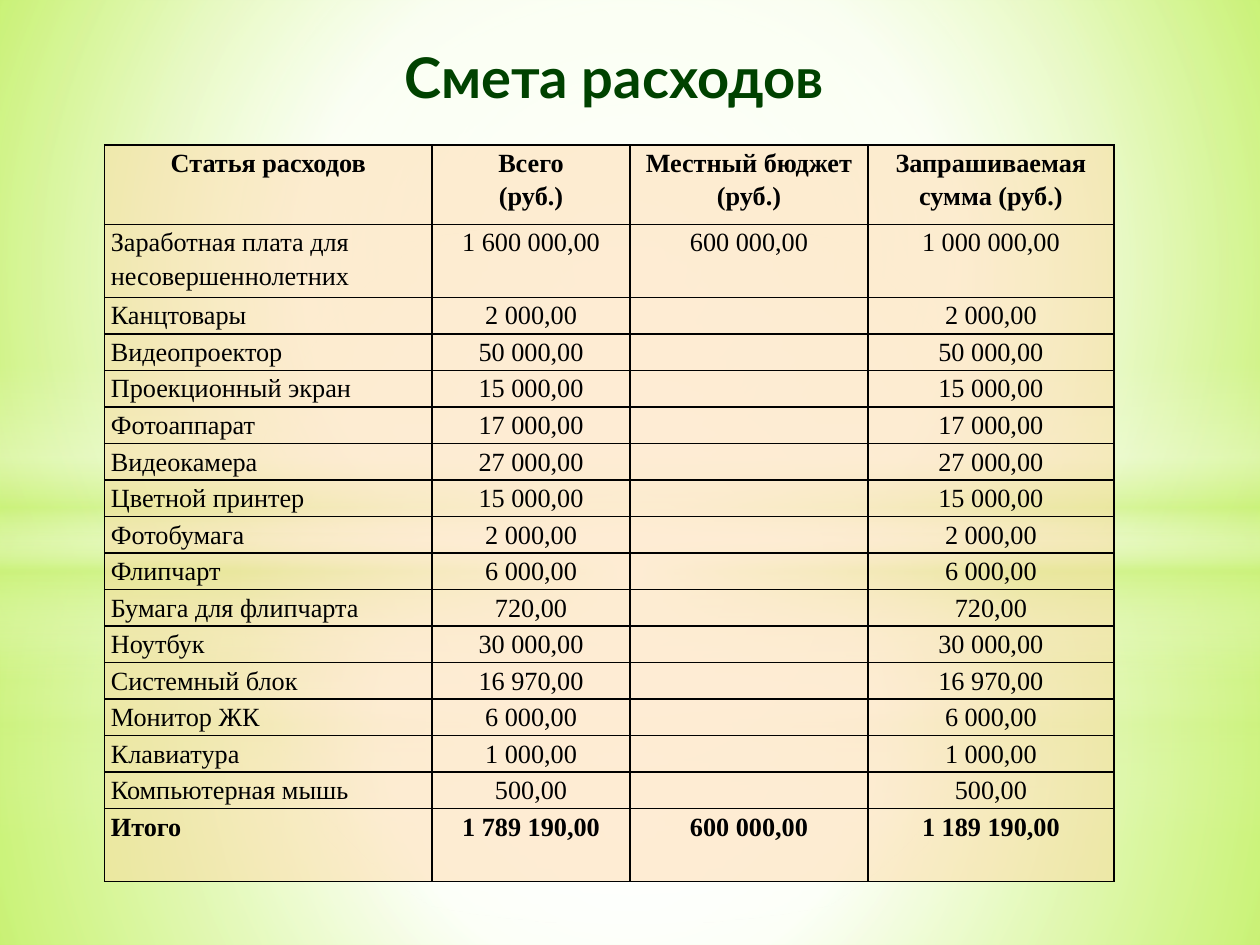
import lxml.etree
import pptx
import pptx.dml.color
import pptx.enum.shapes
import pptx.enum.text
import pptx.oxml.ns
import pptx.util

Inches = pptx.util.Inches
Pt = pptx.util.Pt
ALIGN = pptx.enum.text.PP_ALIGN
SHAPE = pptx.enum.shapes.MSO_SHAPE
qn = pptx.oxml.ns.qn

WHITE, LIME = "FFFFFF", "CAF278"
CENTER = (50, 50, 50, 50)

HEADER = ("Статья расходов", "Всего\n(руб.)", "Местный бюджет\n(руб.)",
          "Запрашиваемая сумма (руб.)")
SALARY = ("Заработная плата для несовершеннолетних",
          "1 600 000,00", "600 000,00", "1 000 000,00")
# Purchases have no local funding: the whole price is requested
PURCHASES = (
    ("Канцтовары", "2 000,00"),
    ("Видеопроектор", "50 000,00"),
    ("Проекционный экран", "15 000,00"),
    ("Фотоаппарат", "17 000,00"),
    ("Видеокамера", "27 000,00"),
    ("Цветной принтер", "15 000,00"),
    ("Фотобумага", "2 000,00"),
    ("Флипчарт", "6 000,00"),
    ("Бумага для флипчарта", "720,00"),
    ("Ноутбук", "30 000,00"),
    ("Системный блок", "16 970,00"),
    ("Монитор ЖК", "6 000,00"),
    ("Клавиатура", "1 000,00"),
    ("Компьютерная мышь", "500,00"),
)
TOTAL = ("Итого", "1 789 190,00", "600 000,00", "1 189 190,00")


def rgb(value):
    return pptx.dml.color.RGBColor.from_string(value)


def add_xml(parent, tag, **attributes):
    return lxml.etree.SubElement(
        parent, qn(tag), {key: str(value) for key, value in attributes.items()})


def set_alpha(color, percent):
    add_xml(color, "a:alpha", val=percent * 1000)


def set_gradient(properties, stops, focus=None):
    """Swap a solid fill for a gradient: circular around focus, else downward."""
    solid = properties.find(qn("a:solidFill"))
    gradient = lxml.etree.Element(qn("a:gradFill"), rotWithShape="1")
    stop_list = add_xml(gradient, "a:gsLst")
    for position, color, alpha in stops:
        stop = add_xml(stop_list, "a:gs", pos=position * 1000)
        set_alpha(add_xml(stop, "a:srgbClr", val=color), alpha)
    if focus:
        circle = add_xml(gradient, "a:path", path="circle")
        edges = {side: edge * 1000 for side, edge in zip("ltrb", focus)}
        add_xml(circle, "a:fillToRect", **edges)
    else:
        add_xml(gradient, "a:lin", ang=90 * 60000, scaled=0)
    properties.replace(solid, gradient)


def add_glow(slide, kind, top, height, stops, focus=None):
    glow = slide.shapes.add_shape(
        kind, 0, Inches(top), Inches(10), Inches(height))
    glow.shadow.inherit = False
    glow.line.fill.background()
    glow.fill.solid()
    set_gradient(glow.element.spPr, stops, focus)


def add_scenery(slide, horizon, band_top, opacity, halo_end):
    """Ground, sky, horizon band and white halo."""
    ground = ((0, WHITE, opacity + 2), (37, WHITE, opacity - 13), (100, LIME, opacity - 10))
    sky = ((0, WHITE, opacity), (48, WHITE, opacity - 27), (100, LIME, opacity - 10))
    band = ((0, WHITE, 0), (29, WHITE, 30), (45, LIME, 40),
            (55, WHITE, 26), (65, LIME, 60), (100, WHITE, 0))
    halo = ((0, WHITE, 100), (halo_end, WHITE, 0))
    add_glow(slide, SHAPE.RECTANGLE, horizon, 7.5 - horizon, ground, CENTER)
    add_glow(slide, SHAPE.RECTANGLE, 0, horizon, sky, CENTER)
    add_glow(slide, SHAPE.RECTANGLE, band_top, 2.5, band)
    add_glow(slide, SHAPE.OVAL, 1.75, 5.58, halo, CENTER)


def set_background(slide):
    slide.background.fill.solid()
    set_gradient(slide.element.find(".//" + qn("p:bgPr")),
                 ((0, "CAFF60", 100), (60, "F7FFE7", 100), (100, "B7FF29", 100)),
                 (20, 10, 20, 60))


def set_title(slide, text):
    title = slide.shapes.title
    title.element.getparent().append(title.element)  # in front of the scenery
    title.left, title.top = Inches(1.61), Inches(0.13)
    title.width, title.height = Inches(6.53), Inches(0.79)
    frame = title.text_frame
    frame.text = text
    frame.auto_size = pptx.enum.text.MSO_AUTO_SIZE.NONE
    frame.vertical_anchor = pptx.enum.text.MSO_ANCHOR.BOTTOM
    paragraph = frame.paragraphs[0]
    paragraph.alignment = ALIGN.CENTER
    font = paragraph.font
    font.name, font.size, font.bold = "Lato", Pt(32), True
    font.color.rgb = rgb("004200")


def format_cell(cell, text, alignment, bold):
    cell.margin_left = cell.margin_right = Inches(0.05)
    cell.margin_top = cell.margin_bottom = 0
    cell.text = text
    for paragraph in cell.text_frame.paragraphs:
        paragraph.alignment = alignment
        paragraph.line_spacing = 1.15
        font = paragraph.font
        font.name, font.size, font.bold = "Times New Roman", Pt(15), bold
        font.color.rgb = rgb("000000")

    # Translucent fill, with the borders placed before it
    cell.fill.solid()
    cell.fill.fore_color.rgb = rgb("FFD9A7")
    properties = cell._tc.tcPr
    set_alpha(properties.find(".//" + qn("a:srgbClr")), 48)
    for index, side in enumerate("LRTB"):
        border = lxml.etree.Element(qn("a:ln" + side), w=str(Pt(1)))
        add_xml(add_xml(border, "a:solidFill"), "a:srgbClr", val="000000")
        properties.insert(index, border)


def add_budget(slide):
    purchases = [(item, price, "", price) for item, price in PURCHASES]
    rows = [HEADER, SALARY, *purchases, TOTAL]
    widths = (2.6, 1.57, 1.89, 1.95)
    heights = [0.63, 0.58] + [0.29] * len(purchases) + [0.58]
    budget = slide.shapes.add_table(
        len(rows), len(widths), Inches(0.83), Inches(1.15),
        Inches(sum(widths)), Inches(sum(heights))).table
    budget.first_row = budget.horz_banding = False
    for column, width in zip(budget.columns, widths):
        column.width = Inches(width)
    for row_index, (texts, height) in enumerate(zip(rows, heights)):
        budget.rows[row_index].height = Inches(height)
        for column_index, text in enumerate(texts):
            if texts is HEADER or column_index > 0:
                alignment = ALIGN.CENTER
            else:
                alignment = ALIGN.LEFT if texts is SALARY else ALIGN.JUSTIFY
            format_cell(budget.cell(row_index, column_index), text,
                        alignment, texts in (HEADER, TOTAL))


def main():
    presentation = pptx.Presentation()
    presentation.slide_width, presentation.slide_height = Inches(10), Inches(7.5)
    slide = presentation.slides.add_slide(presentation.slide_layouts[5])
    set_background(slide)
    add_scenery(slide, horizon=5.58, band_top=4.12, opacity=89, halo_end=56)
    add_scenery(slide, horizon=4.23, band_top=2.9, opacity=90, halo_end=54)
    set_title(slide, "Смета расходов")
    add_budget(slide)
    presentation.save("out.pptx")


if __name__ == "__main__":
    main()
